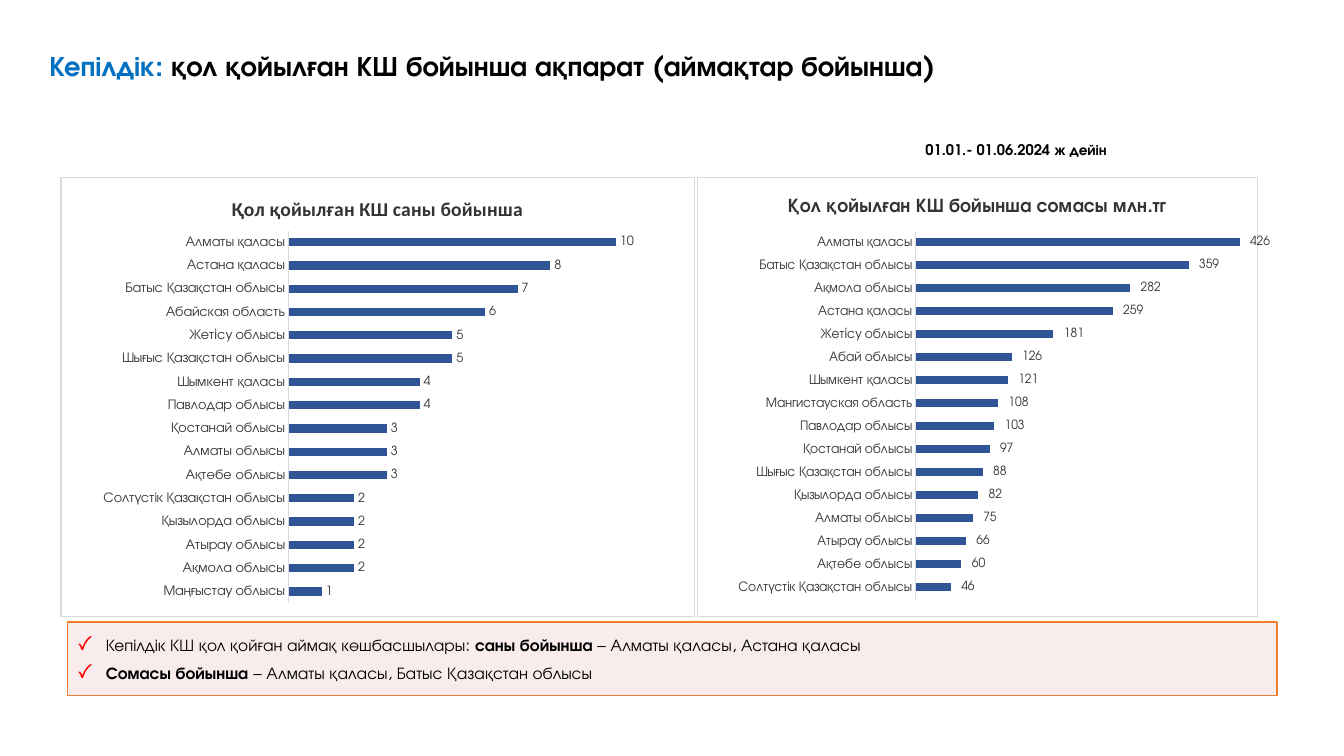
from dataclasses import dataclass
from typing import Any

from lxml import etree
from pptx import Presentation
from pptx import util as u
from pptx.chart.data import CategoryChartData
from pptx.dml.color import RGBColor
from pptx.enum import chart as charts, shapes, text
from pptx.oxml.ns import qn

COUNTS = {
    "Маңғыстау облысы": 1, "Ақмола облысы": 2, "Атырау облысы": 2,
    "Қызылорда облысы": 2, "Солтүстік Қазақстан облысы": 2,
    "Ақтөбе облысы": 3, "Алматы облысы": 3, "Қостанай облысы": 3,
    "Павлодар облысы": 4, "Шымкент қаласы": 4,
    "Шығыс Қазақстан облысы": 5, "Жетiсу облысы": 5,
    "Абайская область": 6, "Батыс Қазақстан облысы": 7,
    "Астана қаласы": 8, "Алматы қаласы": 10,
}
AMOUNTS = {
    "Солтүстік Қазақстан облысы": 46, "Ақтөбе облысы": 60,
    "Атырау облысы": 66, "Алматы облысы": 75, "Қызылорда облысы": 82,
    "Шығыс Қазақстан облысы": 88, "Қостанай облысы": 97,
    "Павлодар облысы": 103, "Мангистауская область": 108,
    "Шымкент қаласы": 121, "Абай облысы": 126, "Жетiсу облысы": 181,
    "Астана қаласы": 259, "Ақмола облысы": 282,
    "Батыс Қазақстан облысы": 359, "Алматы қаласы": 426,
}
AMOUNT_FORMAT = r'_-* #\ ##0_р_._-;\-* #\ ##0_р_._-;_-* "-"'


def rgb(value):
    return RGBColor.from_string(value)


def add_xml(parent, tag, **attributes):
    return etree.SubElement(parent, qn(tag), attributes)


@dataclass
class SlideBuilder:
    presentation: Any
    slide: Any
    font: str = "TeX Gyre Adventor"
    title_font: str = "Calibri"
    ink: str = "000000"
    soft_ink: str = "333333"
    rule: str = "D9D9D9"
    bar: str = "2F5597"

    def place(self, left, top, width, height):
        column = self.presentation.slide_width / 100
        row = self.presentation.slide_height / 100
        return [round(length) for length in
                (left * column, top * row, width * column, height * row)]

    def style(self, font, size, color, name=None, bold=False):
        font.size = u.Pt(size)
        font.color.rgb = rgb(color)
        font.name = name or self.font
        font.bold = bold

    def add_runs(self, paragraph, runs, size):
        for words, bold, color in runs:
            run = paragraph.add_run()
            run.text = words
            self.style(run.font, size, color, bold=bold)

    def text_box(self, area, runs, size):
        frame = self.slide.shapes.add_textbox(*self.place(*area)).text_frame
        frame.word_wrap = True
        self.add_runs(frame.paragraphs[0], runs, size)

    def bullet(self, paragraph, symbol, color):
        properties = paragraph._p.get_or_add_pPr()
        properties.set("marL", str(u.Inches(0.3)))
        properties.set("indent", str(u.Inches(-0.29)))
        bullet_color = add_xml(properties, "a:buClr")
        add_xml(bullet_color, "a:srgbClr", val=color)
        add_xml(properties, "a:buSzPct", val="125000")
        add_xml(properties, "a:buFont", typeface=self.font)
        add_xml(properties, "a:buChar", char=symbol)
        paragraph.space_after = u.Pt(6)

    def checklist(self, area, items, fill, line):
        shape = self.slide.shapes.add_shape(
            shapes.MSO_SHAPE.RECTANGLE, *self.place(*area))
        shape.shadow.inherit = False
        shape.fill.solid()
        shape.fill.fore_color.rgb = rgb(fill)
        fill_color = shape.element.spPr.find(".//" + qn("a:srgbClr"))
        add_xml(fill_color, "a:alpha", val="50000")
        shape.line.color.rgb = rgb(line)
        shape.line.width = u.Pt(1)
        frame = shape.text_frame
        frame.word_wrap = True
        frame.vertical_anchor = text.MSO_ANCHOR.MIDDLE
        frame.margin_left = frame.margin_right = u.Inches(0.08)
        frame.margin_top = frame.margin_bottom = u.Inches(0.04)
        for index, runs in enumerate(items):
            paragraph = frame.add_paragraph() if index else frame.paragraphs[0]
            paragraph.alignment = text.PP_ALIGN.LEFT
            self.bullet(paragraph, "✓", "FF0000")
            self.add_runs(paragraph, runs, 12)

    def frame_chart(self, chart, plot):
        plot_area = chart.element.find(".//" + qn("c:plotArea"))
        for old_layout in plot_area.findall(qn("c:layout")):
            plot_area.remove(old_layout)
        layout = etree.Element(qn("c:layout"))
        manual = add_xml(layout, "c:manualLayout")
        add_xml(manual, "c:layoutTarget", val="inner")
        for tag in ("c:xMode", "c:yMode"):
            add_xml(manual, tag, val="edge")
        for tag, share in zip(("c:x", "c:y", "c:w", "c:h"), plot):
            add_xml(manual, tag, val=str(share))
        plot_area.insert(0, layout)

        properties = etree.Element(qn("c:spPr"))
        line = etree.Element(qn("a:ln"), w=str(u.Pt(0.75)))
        for parent, color in ((properties, "FFFFFF"), (line, self.rule)):
            add_xml(add_xml(parent, "a:solidFill"), "a:srgbClr", val=color)
        properties.append(line)
        chart.element.find(qn("c:chart")).addnext(properties)

    def bar_chart(self, area, title, title_font, values, maximum, plot,
                  number_format="General"):
        data = CategoryChartData()
        data.categories = list(values)
        data.add_series("Series 1", list(values.values()))
        chart = self.slide.shapes.add_chart(
            charts.XL_CHART_TYPE.BAR_CLUSTERED, *self.place(*area), data).chart
        self.style(chart.font, 10, self.ink, self.title_font)
        chart.has_legend = False
        chart.has_title = True
        run = chart.chart_title.text_frame.paragraphs[0].add_run()
        run.text = title
        self.style(run.font, 14, self.soft_ink, title_font, True)
        chart.chart_title.include_in_layout = False

        regions = chart.category_axis
        regions.major_tick_mark = charts.XL_TICK_MARK.NONE
        regions.minor_tick_mark = charts.XL_TICK_MARK.NONE
        regions.format.line.color.rgb = rgb(self.rule)
        regions.format.line.width = u.Pt(0.75)
        self.style(regions.tick_labels.font, 10, self.soft_ink)
        scale = chart.value_axis
        scale.visible = False
        scale.has_major_gridlines = False
        scale.minimum_scale, scale.maximum_scale = 0, maximum

        bars = chart.plots[0]
        bars.gap_width = 182
        bars.vary_by_categories = False
        bars.series[0].format.fill.solid()
        bars.series[0].format.fill.fore_color.rgb = rgb(self.bar)
        bars.has_data_labels = True
        labels = bars.data_labels
        labels.show_value = True
        labels.position = charts.XL_LABEL_POSITION.OUTSIDE_END
        labels.number_format = number_format
        labels.number_format_is_linked = False
        self.style(labels.font, 9, self.soft_ink)
        self.frame_chart(chart, plot)


def main():
    presentation = Presentation()
    presentation.slide_width = u.Inches(13.33)
    presentation.slide_height = u.Inches(7.5)
    slide = presentation.slides.add_slide(presentation.slide_layouts[6])
    builder = SlideBuilder(presentation, slide)
    ink = builder.ink

    builder.text_box((2.93, 5.73, 68.57, 10.27), [
        ("Кепілдік: ", True, "0070C0"),
        ("қол қойылған КШ бойынша ақпарат (аймақтар бойынша)", True, ink)], 20)
    builder.text_box((68.12, 18, 20.1, 3.73),
                     [("01.01.- 01.06.2024 ж дейін", True, ink)], 10.5)
    builder.checklist((5.03, 82.27, 90, 9.73), [
        [("Кепілдік КШ қол қойған аймақ көшбасшылары: ", False, ink),
         ("саны бойынша", True, ink),
         (" – Алматы қаласы, Астана қаласы", False, ink)],
        [("Сомасы бойынша ", True, ink),
         ("– Алматы қаласы, Батыс Қазақстан облысы", False, ink)],
    ], "F2DCDB", "ED7D31")

    chart_top, chart_height = 23.47, 58.13
    builder.bar_chart((4.5, chart_top, 47.18, chart_height),
                      "Қол қойылған КШ саны бойынша", builder.title_font,
                      COUNTS, 12, (0.36, 0.12, 0.62, 0.85))
    builder.bar_chart((51.84, chart_top, 43.66, chart_height),
                      "Қол қойылған КШ бойынша сомасы млн.тг", builder.font,
                      AMOUNTS, 450, (0.39, 0.12, 0.61, 0.84), AMOUNT_FORMAT)
    presentation.save("out.pptx")


if __name__ == "__main__":
    main()
